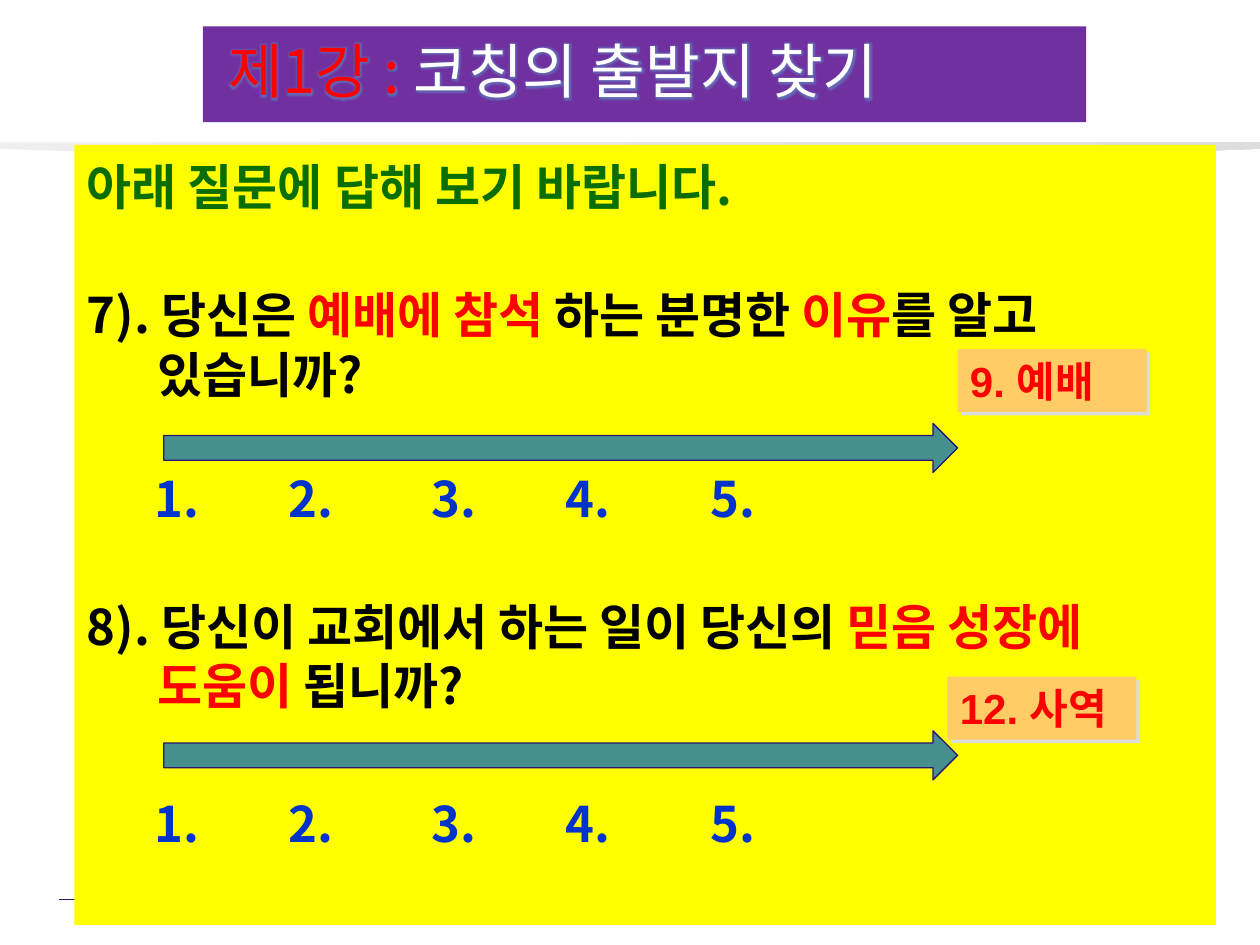
from typing import NamedTuple

from lxml import etree
from pptx import Presentation
from pptx.dml.color import RGBColor
from pptx.enum.shapes import MSO_CONNECTOR, MSO_SHAPE
from pptx.enum.text import MSO_ANCHOR, PP_ALIGN
from pptx.oxml.ns import qn
from pptx.util import Emu, Inches, Pt

RECTANGLE, ARROW = MSO_SHAPE.RECTANGLE, MSO_SHAPE.RIGHT_ARROW
LEFT, MIDDLE, TOP = PP_ALIGN.LEFT, MSO_ANCHOR.MIDDLE, MSO_ANCHOR.TOP
TITLE_ONLY = 5
KOREAN, LATIN = "Noto Sans CJK KR", "Arial"
WIDTH, HEIGHT = 10, 7.5
COLORS = {
    "yellow": "FFFF00", "green": "0A6E02", "black": "000000", "red": "FF0000",
    "blue": "0033CC", "teal": "458F8F", "navy": "2B166E", "orange": "FFCC66",
    "purple": "7030A0", "white": "FFFFFF", "grey": "DDDDDD", "pale": "EEEEEE",
    "glow": "5B8FC4",
}
HANGING = 0.56
TAB_STOPS = (0.54, 1.6, 2.74, 3.8, 4.95)
SCALE = "".join(f"\t{number}." for number in range(1, 6))


class Span(NamedTuple):
    text: str
    color: str


class Line(NamedTuple):
    spans: tuple[Span, ...]
    before: float = 0
    hanging: bool = False
    tabbed: bool = False


class Label(NamedTuple):
    text: str
    left: float
    top: float


BODY_LINES = (
    Line((Span("아래 질문에 답해 보기 바랍니다.", "green"),)),
    Line((Span("7). 당신은 ", "black"), Span("예배에 참석 ", "red"),
          Span("하는 분명한 ", "black"), Span("이유", "red"),
          Span("를 알고 있습니까?", "black")), before=39, hanging=True),
    Line((Span(SCALE, "blue"),), before=37, tabbed=True),
    Line((Span("8). 당신이 교회에서 하는 일이 당신의 ", "black"),
          Span("믿음 성장에 도움이 ", "red"), Span("됩니까?", "black")),
         before=39, hanging=True),
    Line((Span(SCALE, "blue"),), before=45, tabbed=True),
)
TITLE_SPANS = (Span("제1강 : ", "red"), Span("코칭의 출발지 찾기", "white"))
LABELS = (Label("9. 예배", 7.6, 2.77), Label("12. 사역", 7.52, 5.37))
ARROW_TOPS = (3.36, 5.8)


def rgb(name: str) -> RGBColor:
    return RGBColor.from_string(COLORS[name])


def add_effect(properties, tag: str, color: str, alpha: int = 100, **attributes) -> None:
    effects = properties.find(qn("a:effectLst"))
    if effects is None:
        effects = etree.SubElement(properties, qn("a:effectLst"))
    effect = etree.SubElement(effects, qn(tag), attributes)
    tint = etree.SubElement(effect, qn("a:srgbClr"), val=COLORS[color])
    etree.SubElement(tint, qn("a:alpha"), val=str(alpha * 1000))


def add_span(para, text: str, *, color: str, size: float, bold: bool = False,
             font: str = KOREAN, glow: bool = False) -> None:
    run = para.add_run()
    run.text = text
    run.font.size, run.font.bold = Pt(size), bold
    run.font.color.rgb = rgb(color)
    properties = run.font._element
    if glow:
        add_effect(properties, "a:glow", "glow", 60, rad=str(Pt(4)))
    run.font.name = font
    east_asian = etree.Element(qn("a:ea"), typeface=KOREAN)
    properties.find(qn("a:latin")).addnext(east_asian)


def add_shape(page, kind, left: float, top: float, width: float, height: float,
              fill: str, line: str | None = None):
    shape = page.shapes.add_shape(
        kind, Inches(left), Inches(top), Inches(width), Inches(height))
    shape.shadow.inherit = False
    shape.fill.solid()
    shape.fill.fore_color.rgb = rgb(fill)
    if line:
        shape.line.color.rgb = rgb(line)
        shape.line.width = Pt(0.75)
    else:
        shape.line.fill.background()
    return shape


def draw_band(page) -> None:
    """Draw the shallow curved band and the footer rule behind the content."""
    right, top, edge, sag = WIDTH, 1.13, 1.18, 0.1
    steps = 24
    curve = [(right * i / steps, edge + 4 * sag * (i / steps) * (1 - i / steps))
             for i in range(steps + 1)]
    builder = page.shapes.build_freeform(0, Inches(top))
    points = [*curve, (right, top)]
    builder.add_line_segments([(Inches(x), Inches(y)) for x, y in points])
    band = builder.convert_to_shape()
    band.shadow.inherit = False
    band.line.fill.background()
    band.fill.gradient()
    band.fill.gradient_angle = 0
    for stop, color in zip(band.fill.gradient_stops, ("pale", "grey")):
        stop.color.rgb = rgb(color)

    rule = page.shapes.add_connector(MSO_CONNECTOR.STRAIGHT, Inches(0.47),
                                     Inches(7.14), Inches(9.6), Inches(7.14))
    rule.line.color.rgb = rgb("navy")
    rule.line.width = Pt(0.75)
    etree.SubElement(rule._element.spPr, qn("a:effectLst"))


def draw_title(page) -> None:
    title = page.shapes.title
    title.left, title.top = Inches(1.61), Inches(0.21)
    title.width, title.height = Inches(7.01), Inches(0.76)
    title.fill.solid()
    title.fill.fore_color.rgb = rgb("purple")
    frame = title.text_frame
    frame.vertical_anchor, frame.margin_left = MIDDLE, Inches(0.2)
    para = frame.paragraphs[0]
    para.alignment, para.line_spacing = LEFT, 0.9
    for span in TITLE_SPANS:
        add_span(para, span.text, color=span.color, size=34, glow=True)


def draw_body(page) -> None:
    frame = add_shape(page, RECTANGLE, 0.59, 1.15, 9.06, 6.19, "yellow").text_frame
    frame.word_wrap, frame.vertical_anchor = True, TOP
    frame.margin_top = Inches(0.09)
    for index, line in enumerate(BODY_LINES):
        para = frame.add_paragraph() if index else frame.paragraphs[0]
        para.alignment, para.line_spacing = LEFT, Pt(34)
        para.space_before = Pt(line.before)
        properties = para._p.get_or_add_pPr()
        if line.hanging:
            properties.set("marL", str(Inches(HANGING)))
            properties.set("indent", str(-Inches(HANGING)))
        if line.tabbed:
            tabs = etree.SubElement(properties, qn("a:tabLst"))
            for stop in TAB_STOPS:
                etree.SubElement(tabs, qn("a:tab"), pos=str(Inches(stop)), algn="l")
        for span in line.spans:
            add_span(para, span.text, color=span.color, size=28, bold=True)


def draw_label(page, label: Label) -> None:
    box = add_shape(page, RECTANGLE, label.left, label.top, 1.5, 0.5, "orange")
    add_effect(box._element.spPr, "a:outerShdw", "grey", dist=str(Emu(Pt(2.8))),
               dir=str(45 * 60000), algn="ctr", rotWithShape="0")
    frame = box.text_frame
    frame.word_wrap, frame.vertical_anchor = False, MIDDLE
    para = frame.paragraphs[0]
    para.alignment = LEFT
    add_span(para, label.text, color="red", size=24, bold=True, font=LATIN)


def main() -> None:
    deck = Presentation()
    deck.slide_width, deck.slide_height = Inches(WIDTH), Inches(HEIGHT)
    page = deck.slides.add_slide(deck.slide_layouts[TITLE_ONLY])
    draw_band(page)
    draw_title(page)
    draw_body(page)
    for top in ARROW_TOPS:
        add_shape(page, ARROW, 1.3, top, 6.3, 0.39, "teal", line="navy")
    for label in LABELS:
        draw_label(page, label)
    deck.save("out.pptx")


if __name__ == "__main__":
    main()
